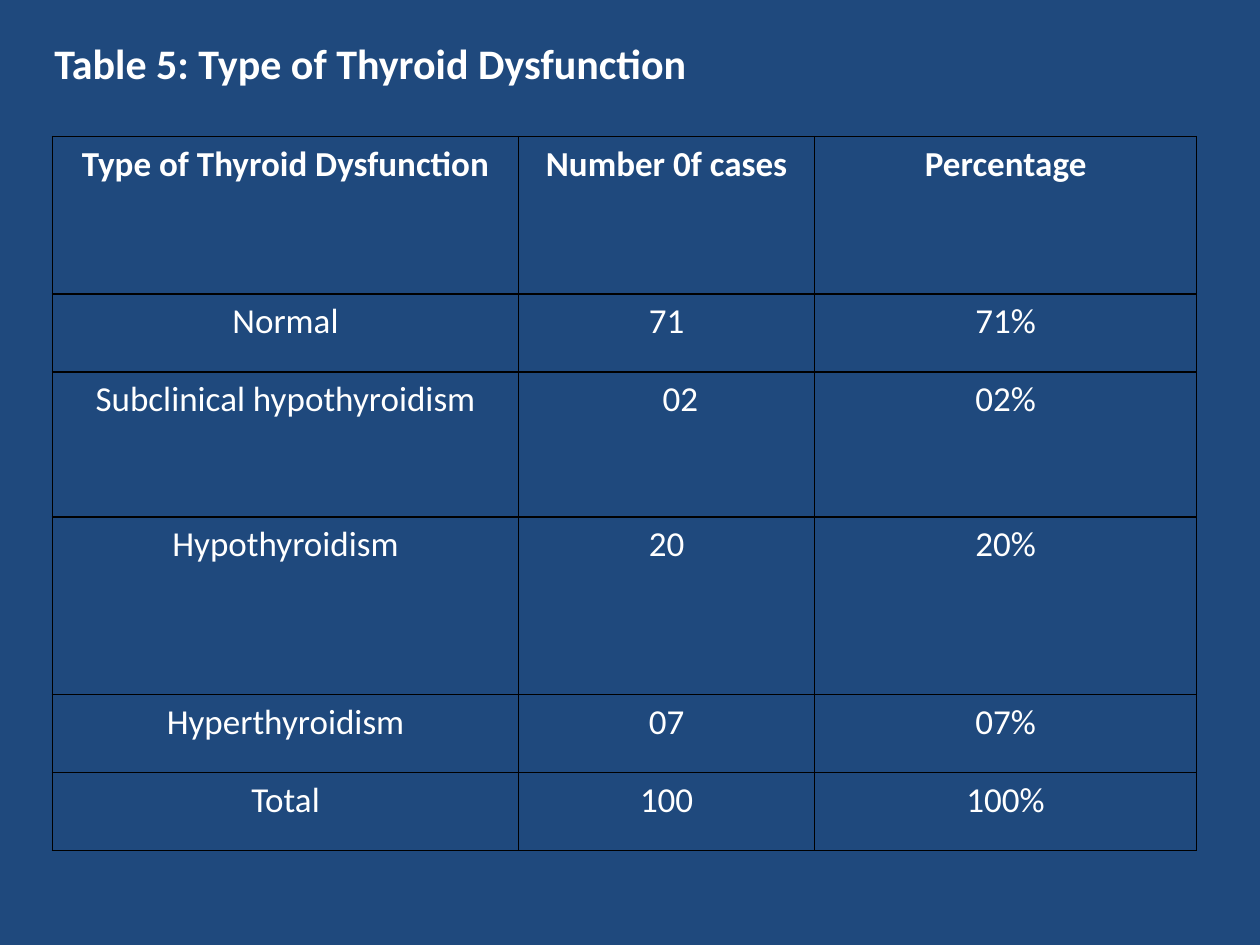
"""Build a slide with a table of thyroid dysfunction types."""
from lxml import etree
from pptx import Presentation
from pptx.dml.color import RGBColor
from pptx.enum.text import MSO_AUTO_SIZE, PP_ALIGN
from pptx.oxml.ns import qn
from pptx.util import Pt

LEFT, CENTER = PP_ALIGN.LEFT, PP_ALIGN.CENTER
GROW = MSO_AUTO_SIZE.SHAPE_TO_FIT_TEXT
FONT = "Calibri"
COLORS = {"back": "1F497D", "text": "FFFFFF", "line": "000000"}
COLS = [266.4, 169.2, 218.2]
ROWS = [90, 44.6, 82.8, 101.5, 44.6, 44.6]
DATA = [
    ["Type of Thyroid Dysfunction", "Number 0f cases", "Percentage"],
    ["Normal", "71", "71%"],
    ["Subclinical hypothyroidism", "02", "02%"],
    ["Hypothyroidism", "20", "20%"],
    ["Hyperthyroidism", "07", "07%"],
    ["Total", "100", "100%"],
]
INSET = 5
INDENTS = {(2, 1): 82.3}


def add_run(para, text, size, bold):
    run = para.add_run()
    run.text = text
    font = run.font
    font.name, font.size, font.bold = FONT, Pt(size), bold
    font.color.rgb = RGBColor.from_string(COLORS["text"])


def add_title(slide, text):
    box = slide.shapes.add_textbox(Pt(24), Pt(18), Pt(648), Pt(36))
    frame = box.text_frame
    frame.word_wrap = True
    frame.auto_size = GROW
    add_run(frame.paragraphs[0], text, 24, True)


def add_border(cell):
    props = cell._tc.get_or_add_tcPr()
    for side in ("lnL", "lnR", "lnT", "lnB"):
        line = etree.SubElement(props, qn(f"a:{side}"), w=str(Pt(1)))
        fill = etree.SubElement(line, qn("a:solidFill"))
        etree.SubElement(fill, qn("a:srgbClr"), val=COLORS["line"])


def fill_cell(cell, text, bold, indent):
    add_border(cell)
    cell.fill.background()
    cell.margin_left = Pt(indent or INSET)
    cell.margin_right = Pt(INSET)
    cell.margin_top = cell.margin_bottom = 0
    para = cell.text_frame.paragraphs[0]
    para.alignment = LEFT if indent else CENTER
    para.line_spacing = 1.15
    add_run(para, text, 20, bold)


def add_grid(slide):
    frame = slide.shapes.add_table(
        len(ROWS), len(COLS), Pt(30), Pt(78), Pt(sum(COLS)), Pt(sum(ROWS)))
    table = frame.table
    table.first_row = table.horz_banding = False
    for col, width in zip(table.columns, COLS):
        col.width = Pt(width)
    for row, height in zip(table.rows, ROWS):
        row.height = Pt(height)
    for i, row in enumerate(DATA):
        for j, text in enumerate(row):
            fill_cell(table.cell(i, j), text, i == 0, INDENTS.get((i, j)))


def main():
    deck = Presentation()
    deck.slide_width, deck.slide_height = Pt(720), Pt(540)
    slide = deck.slides.add_slide(deck.slide_layouts[6])
    fill = slide.background.fill
    fill.solid()
    fill.fore_color.rgb = RGBColor.from_string(COLORS["back"])
    add_title(slide, "Table 5: Type of Thyroid Dysfunction")
    add_grid(slide)
    deck.save("out.pptx")


if __name__ == "__main__":
    main()
